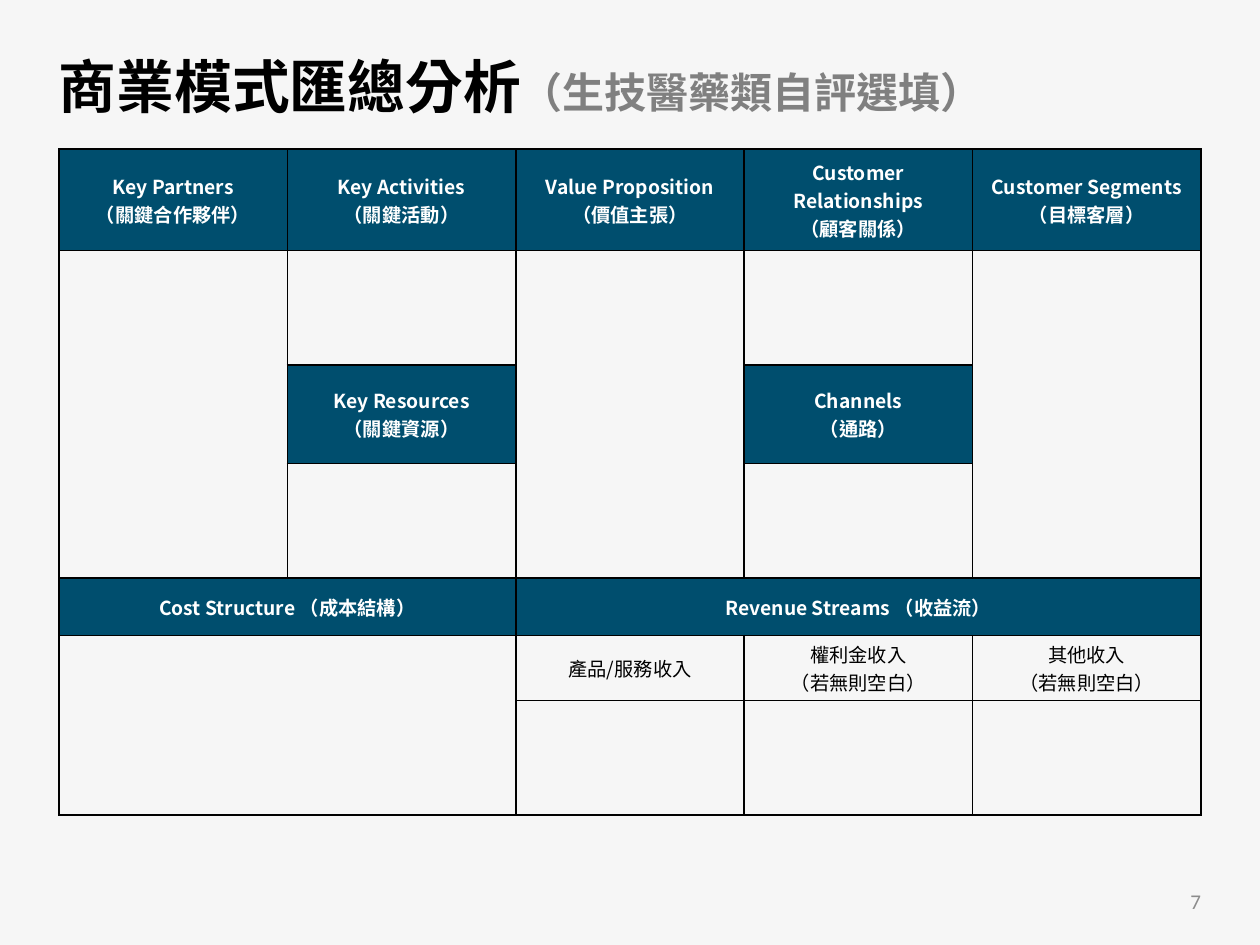
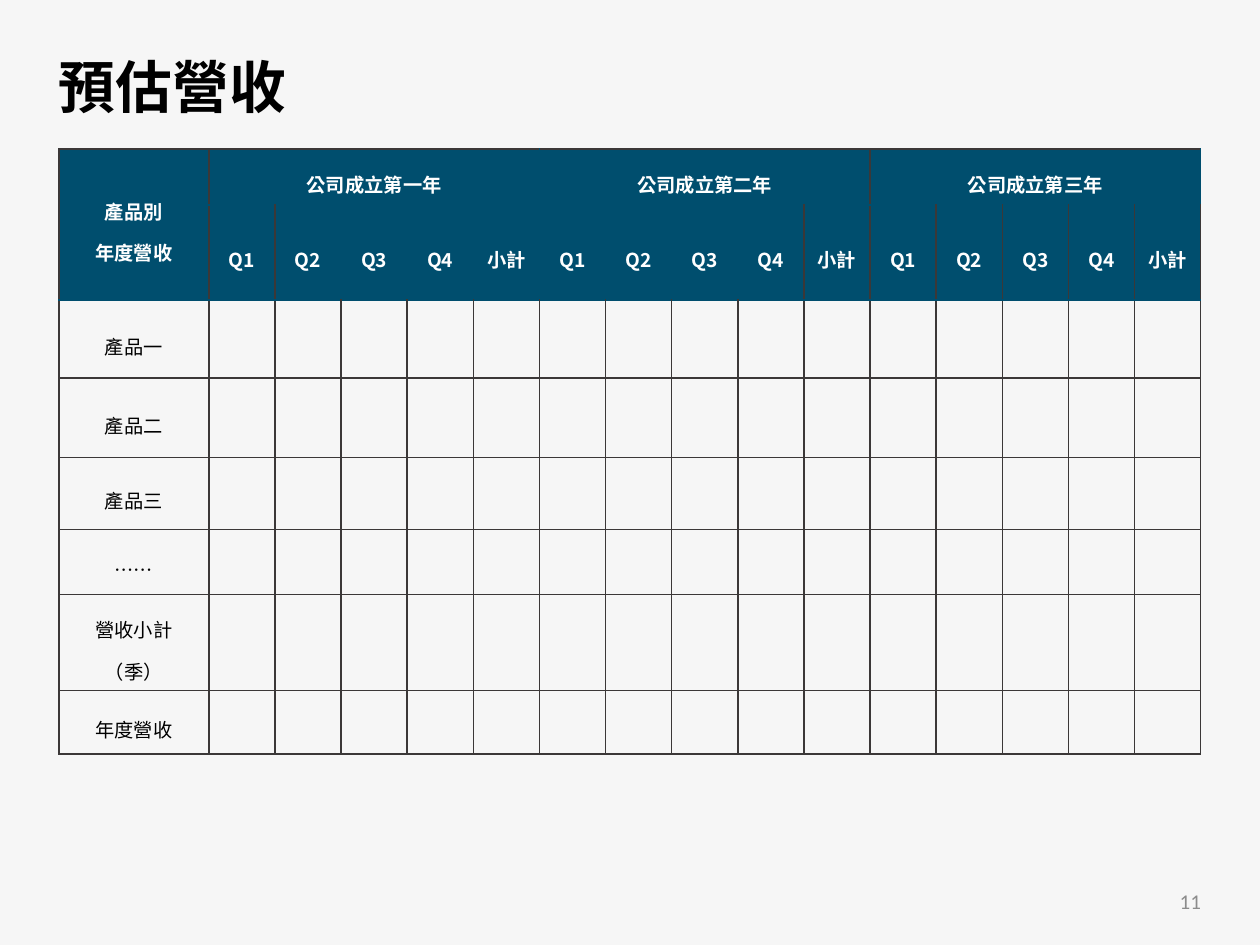
import dataclasses

import lxml.etree
import pptx
import pptx.dml.color
import pptx.enum.text
import pptx.oxml.ns
import pptx.util

Cm = pptx.util.Cm
Pt = pptx.util.Pt
qn = pptx.oxml.ns.qn
Align = pptx.enum.text.PP_ALIGN


@dataclasses.dataclass(frozen=True)
class Theme:
    background: str = "F6F6F6"
    header: str = "004E6E"
    header_text: str = "FFFFFF"
    text: str = "000000"
    muted: str = "808080"
    page_number: str = "8C8C8C"
    canvas_line: str = "000000"
    revenue_line: str = "3B3838"
    font: str = "Noto Sans CJK SC"
    number_font: str = "Calibri"
    canvas_title_size: float = 33
    revenue_title_size: float = 32.4
    subtitle_size: float = 24
    table_size: float = 11
    number_size: float = 12


THEME = Theme()

# Boxes are left, top, width, height in centimetres.
TITLE_BOX = (0.94, 0.56, 23.5, 2.06)
NUMBER_BOX = (18.75, 17.65, 5.71, 1.02)
CANVAS_BOX = (1.19, 3, 23.02, 13.43)
REVENUE_BOX = (1.19, 3, 23.02, 12.2)

CANVAS_ROWS = (2.05, 2.31, 1.98, 2.31, 1.16, 1.31, 2.31)
CANVAS_MERGES = (
    (1, 0, 3, 1), (1, 2, 3, 1), (1, 4, 3, 1),
    (4, 0, 1, 2), (4, 2, 1, 3), (5, 0, 2, 2),
)
CANVAS_HEADINGS = {
    (0, 0): ("Key Partners", "（關鍵合作夥伴）"),
    (0, 1): ("Key Activities", "（關鍵活動）"),
    (0, 2): ("Value Proposition", "（價值主張）"),
    (0, 3): ("Customer Relationships", "（顧客關係）"),
    (0, 4): ("Customer Segments", "（目標客層）"),
    (2, 1): ("Key Resources", "（關鍵資源）"),
    (2, 3): ("Channels", "（通路）"),
    (4, 0): ("Cost Structure （成本結構）",),
    (4, 2): ("Revenue Streams （收益流）",),
}
CANVAS_INCOMES = {
    (5, 2): ("產品/服務收入",),
    (5, 3): ("權利金收入\n（若無則空白）",),
    (5, 4): ("其他收入\n（若無則空白）",),
}

REVENUE_ROWS = (1.13, 1.92, 1.57, 1.6, 1.45, 1.32, 1.93, 1.28)
PRODUCT_COLUMN = 3.02
YEARS = ("公司成立第一年", "公司成立第二年", "公司成立第三年")
PERIODS = ("Q1", "Q2", "Q3", "Q4", "小計")
REVENUE_ITEMS = ("產品一", "產品二", "產品三", "……", "營收小計（季）", "年度營收")
# Column lines that stay visible on the two header rows.
HEADER_LINES = ({0, 1, 11, 16}, {0, 1, 2, *range(10, 17)})


def rgb(colour):
    return pptx.dml.color.RGBColor.from_string(colour)


def add_run(paragraph, text, size, colour, bold=False, font=THEME.font):
    run = paragraph.add_run()
    run.text = text
    run.font.size = Pt(size)
    run.font.bold = bold
    run.font.color.rgb = rgb(colour)
    run.font.name = font
    properties = run._r.get_or_add_rPr()
    properties.set("lang", "zh-TW")
    latin = properties.find(qn("a:latin"))
    east_asian = lxml.etree.Element(qn("a:ea"), typeface=font)
    latin.addnext(east_asian)


def add_text_box(slide, box):
    """Add a wrapping, vertically centred box and return its first paragraph."""
    shape = slide.shapes.add_textbox(*map(Cm, box))
    frame = shape.text_frame
    frame.word_wrap = True
    frame.vertical_anchor = pptx.enum.text.MSO_ANCHOR.MIDDLE
    return frame.paragraphs[0]


def add_title(slide, box, title, size, subtitle=None):
    paragraph = add_text_box(slide, box)
    paragraph.line_spacing = 1.2
    add_run(paragraph, title, size, THEME.text, bold=True)
    if subtitle:
        add_run(paragraph, subtitle, THEME.subtitle_size, THEME.muted, bold=True)


def add_page_number(slide, box, number):
    paragraph = add_text_box(slide, box)
    paragraph.alignment = Align.RIGHT
    add_run(paragraph, str(number), THEME.number_size, THEME.page_number,
            font=THEME.number_font)


def add_slide(presentation, title, size, number, subtitle=None):
    slide = presentation.slides.add_slide(presentation.slide_layouts[6])
    slide.background.fill.solid()
    slide.background.fill.fore_color.rgb = rgb(THEME.background)
    add_title(slide, TITLE_BOX, title, size, subtitle)
    add_page_number(slide, NUMBER_BOX, number)
    return slide


def set_border(cell, side, colour):
    line = lxml.etree.SubElement(cell._tc.get_or_add_tcPr(), qn(f"a:ln{side}"),
                                 w=str(Pt(1)))
    fill = lxml.etree.SubElement(line, qn("a:solidFill"))
    lxml.etree.SubElement(fill, qn("a:srgbClr"), val=colour)


def add_grid(slide, box, widths, heights, margins, line_colour):
    """Add an unfilled table; line_colour(direction, row, column) colours the
    line above (horizontal) or to the left of (vertical) that position."""
    table = slide.shapes.add_table(len(heights), len(widths), *map(Cm, box)).table
    table.first_row = table.horz_banding = False
    for column, width in zip(table.columns, widths):
        column.width = Cm(width)
    for row, height in zip(table.rows, heights):
        row.height = Cm(height)
    for row in range(len(heights)):
        for column in range(len(widths)):
            cell = table.cell(row, column)
            set_border(cell, "L", line_colour("vertical", row, column))
            set_border(cell, "R", line_colour("vertical", row, column + 1))
            set_border(cell, "T", line_colour("horizontal", row, column))
            set_border(cell, "B", line_colour("horizontal", row + 1, column))
            cell.fill.background()
            cell.vertical_anchor = pptx.enum.text.MSO_ANCHOR.MIDDLE
            cell.margin_left = cell.margin_right = Cm(margins[0])
            cell.margin_top = cell.margin_bottom = Cm(margins[1])
    return table


def merge(table, row, column, row_count, column_count):
    last = table.cell(row + row_count - 1, column + column_count - 1)
    table.cell(row, column).merge(last)


def write_cell(cell, lines, heading=False, spacing=None):
    """Write one paragraph per line; a newline inside a line is a soft break."""
    colour = THEME.header_text if heading else THEME.text
    if heading:
        cell.fill.solid()
        cell.fill.fore_color.rgb = rgb(THEME.header)
    frame = cell.text_frame
    for index, line in enumerate(lines):
        paragraph = frame.add_paragraph() if index else frame.paragraphs[0]
        paragraph.alignment = Align.CENTER
        if spacing:
            paragraph.line_spacing = spacing
        for part_index, part in enumerate(line.split("\n")):
            if part_index:
                paragraph.add_line_break()
            add_run(paragraph, part, THEME.table_size, colour, bold=heading)


def add_business_canvas(slide, box):
    widths = [box[2] / 5] * 5
    table = add_grid(slide, box, widths, CANVAS_ROWS, (0.18, 0.1),
                     lambda direction, row, column: THEME.canvas_line)
    for area in CANVAS_MERGES:
        merge(table, *area)
    for position, lines in CANVAS_HEADINGS.items():
        write_cell(table.cell(*position), lines, heading=True)
    for position, lines in CANVAS_INCOMES.items():
        write_cell(table.cell(*position), lines)


def revenue_line_colour(direction, row, column):
    header_rows = len(HEADER_LINES)
    if direction == "vertical":
        hidden = row < header_rows and column not in HEADER_LINES[row]
    else:
        hidden = 0 < row <= header_rows
    return THEME.header if hidden else THEME.revenue_line


def add_revenue_table(slide, box):
    period_count = len(YEARS) * len(PERIODS)
    period_width = (box[2] - PRODUCT_COLUMN) / period_count
    widths = [PRODUCT_COLUMN] + [period_width] * period_count
    table = add_grid(slide, box, widths, REVENUE_ROWS, (0.25, 0.13),
                     revenue_line_colour)

    merge(table, 0, 0, 2, 1)
    write_cell(table.cell(0, 0), ("產品別", "年度營收"), heading=True, spacing=1.5)
    for year_index, year in enumerate(YEARS):
        first = 1 + year_index * len(PERIODS)
        merge(table, 0, first, 1, len(PERIODS))
        write_cell(table.cell(0, first), (year,), heading=True, spacing=1.5)
        for column, period in enumerate(PERIODS, first):
            write_cell(table.cell(1, column), (period,), heading=True, spacing=1.5)
    for row, item in enumerate(REVENUE_ITEMS, 2):
        write_cell(table.cell(row, 0), (item,), spacing=1.5)


def main():
    presentation = pptx.Presentation()
    presentation.slide_width = Cm(25.4)
    presentation.slide_height = Cm(19.05)

    canvas_slide = add_slide(presentation, "商業模式匯總分析", THEME.canvas_title_size,
                             7, subtitle="（生技醫藥類自評選填）")
    add_business_canvas(canvas_slide, CANVAS_BOX)

    revenue_slide = add_slide(presentation, "預估營收", THEME.revenue_title_size, 11)
    add_revenue_table(revenue_slide, REVENUE_BOX)

    presentation.save("out.pptx")


if __name__ == "__main__":
    main()
